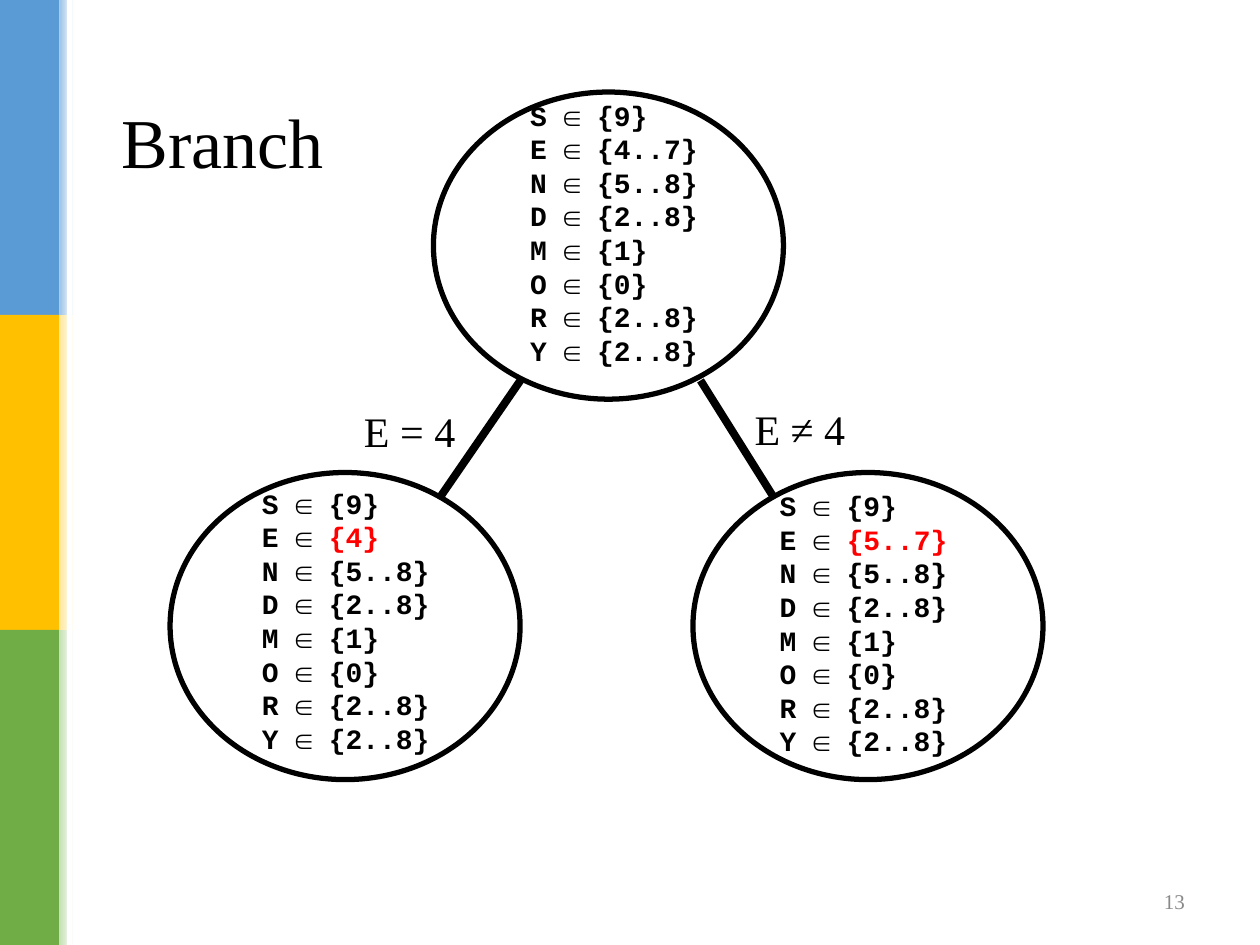
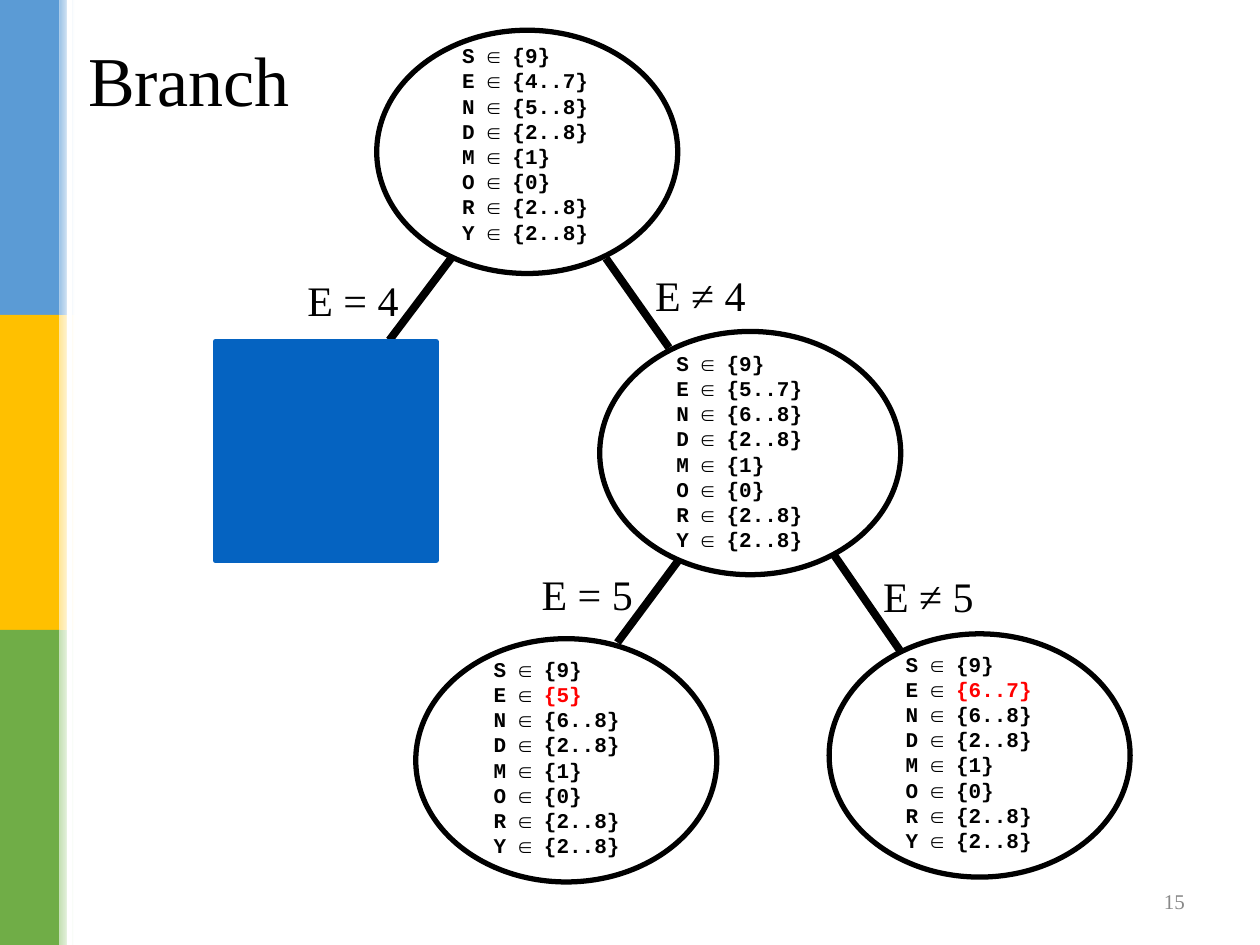
from dataclasses import dataclass

from lxml import etree
from pptx import Presentation
from pptx.dml.color import RGBColor
from pptx.enum.shapes import MSO_CONNECTOR, MSO_SHAPE
from pptx.enum.text import MSO_ANCHOR, MSO_AUTO_SIZE, PP_ALIGN
from pptx.oxml.ns import qn
from pptx.util import Pt

RECT, OVAL = MSO_SHAPE.RECTANGLE, MSO_SHAPE.OVAL
STRAIGHT = MSO_CONNECTOR.STRAIGHT
LEFT, RIGHT = PP_ALIGN.LEFT, PP_ALIGN.RIGHT
TOP, MIDDLE = MSO_ANCHOR.TOP, MSO_ANCHOR.MIDDLE
GROW, FIXED = MSO_AUTO_SIZE.SHAPE_TO_FIT_TEXT, MSO_AUTO_SIZE.NONE


@dataclass(frozen=True)
class Theme:
    ink: str = "000000"
    paper: str = "FFFFFF"
    changed: str = "FF0000"
    closed: str = "0563C1"
    muted: str = "898989"
    bands: tuple = (("5B9BD5", "9DC3E6"), ("FFC000", "FFE699"), ("70AD47", "C5E0B4"))
    serif: str = "Times New Roman"
    mono: str = "Courier New"
    title_size: int = 40
    label_size: int = 24
    number_size: int = 12
    outline: float = 3
    branch: float = 4.5


@dataclass(frozen=True)
class NodeStyle:
    """Oval size, domain list size and type size of the nodes in one tree."""
    oval: tuple
    domains: tuple
    size: int


LARGE = NodeStyle((200, 175.5), (112.3, 161.3), 16)
SMALL = NodeStyle((172, 139), (88.6, 122.4), 12)

# Variable domains at each step of the search
ROOT = {"S": "{9}", "E": "{4..7}", "N": "{5..8}", "D": "{2..8}",
        "M": "{1}", "O": "{0}", "R": "{2..8}", "Y": "{2..8}"}
E_IS_4 = ROOT | {"E": "{4}"}
E_NOT_4 = ROOT | {"E": "{5..7}"}
E_NOT_4_PRUNED = E_NOT_4 | {"N": "{6..8}"}
E_IS_5 = E_NOT_4_PRUNED | {"E": "{5}"}
E_NOT_5 = E_NOT_4_PRUNED | {"E": "{6..7}"}


class Deck:
    def __init__(self, theme):
        self.theme = theme
        self.prs = Presentation()
        self.prs.slide_width, self.prs.slide_height = Pt(720), Pt(540)
        self.slide = None

    def new_slide(self, title_at, number):
        theme = self.theme
        self.slide = self.prs.slides.add_slide(self.prs.slide_layouts[6])
        # Side bands with a fading edge
        for row, (band, edge) in enumerate(theme.bands):
            self.shape(RECT, (0, 180 * row), (34, 180), fill=band)
            self.fade((34, 180 * row), (8.5, 180), edge)
        self.shape(RECT, (38.2, 0), (3, 540), fill=theme.paper)
        # Title and slide number
        self.text(title_at, (130.3, 55.4), [[("Branch", theme.ink)]], theme.title_size)
        self.text((516.2, 500.4), (168, 28.8), [[(number, theme.muted)]],
                  theme.number_size, align=RIGHT, anchor=MIDDLE, wrap=True)

    def shape(self, kind, at, size, fill=None, line=None):
        shape = self.slide.shapes.add_shape(kind, *map(Pt, at + size))
        shape.shadow.inherit = False
        if fill:
            shape.fill.solid()
            shape.fill.fore_color.rgb = RGBColor.from_string(fill)
        else:
            shape.fill.background()
        if line:
            shape.line.color.rgb = RGBColor.from_string(line)
            shape.line.width = Pt(self.theme.outline)
        else:
            shape.line.fill.background()
        return shape

    def fade(self, at, size, color):
        fill = self.shape(RECT, at, size).fill
        fill.gradient()
        fill.gradient_angle = 0
        for stop, shade in zip(fill.gradient_stops, (color, self.theme.paper)):
            stop.color.rgb = RGBColor.from_string(shade)

    def text(self, at, size, lines, type_size, font=None, bold=False,
             align=LEFT, anchor=TOP, wrap=False):
        frame = self.slide.shapes.add_textbox(*map(Pt, at + size)).text_frame
        settings = {"word_wrap": wrap, "vertical_anchor": anchor,
                    "auto_size": FIXED if wrap else GROW}
        for name, value in settings.items():
            setattr(frame, name, value)
        letters = {"name": font or self.theme.serif, "size": Pt(type_size), "bold": bold}
        for index, pieces in enumerate(lines):
            paragraph = frame.add_paragraph() if index else frame.paragraphs[0]
            paragraph.alignment = align
            for words, color in pieces:
                run = paragraph.add_run()
                run.text = words
                for name, value in letters.items():
                    setattr(run.font, name, value)
                run.font.color.rgb = RGBColor.from_string(color)

    def node(self, style, oval_at, domains_at, domains, changed=None):
        theme = self.theme
        self.shape(OVAL, oval_at, style.oval, line=theme.ink)
        lines = []
        for letter, domain in domains.items():
            if letter == changed:
                lines.append([(f"{letter} ∈ ", theme.ink), (domain, theme.changed)])
            else:
                lines.append([(f"{letter} ∈ {domain}", theme.ink)])
        self.text(domains_at, style.domains, lines, style.size, theme.mono, bold=True)

    def branch(self, start, end, choice, choice_at):
        theme = self.theme
        line = self.slide.shapes.add_connector(STRAIGHT, *map(Pt, start + end))
        line.line.color.rgb = RGBColor.from_string(theme.ink)
        line.line.width = Pt(theme.branch)
        etree.SubElement(line._element.spPr, qn("a:effectLst"))
        self.text(choice_at, (66.6, 36), [[(choice, theme.ink)]], theme.label_size)


def first_branch(deck):
    deck.new_slide((62.6, 52.6), "13")
    deck.branch((297.4, 217.4), (251.3, 284.4), "E = 4", (200.9, 228.2))
    deck.branch((400.3, 217.4), (441.4, 283), "E ≠ 4", (424.1, 226.8))
    deck.node(LARGE, (247.7, 52.6), (295.9, 52.6), ROOT)
    deck.node(LARGE, (97.2, 270), (142.6, 274.3), E_IS_4, changed="E")
    deck.node(LARGE, (396, 270), (438.5, 275.8), E_NOT_4, changed="E")


def second_branch(deck):
    deck.new_slide((43.2, 17.3), "15")
    # Upper choice, with the left side closed
    deck.branch((257.8, 147.6), (222.5, 194.4), "E = 4", (168.5, 153.4))
    deck.branch((346.3, 147.6), (382.3, 198.7), "E ≠ 4", (367.2, 150.5))
    deck.node(SMALL, (215.3, 17.3), (257, 20.9), ROOT)
    deck.shape(RECT, (123.1, 195.1), (126, 125.3),
               fill=deck.theme.closed, line=deck.theme.closed)
    deck.node(SMALL, (342.7, 189.4), (379.4, 196.6), E_NOT_4_PRUNED)
    # Lower choice
    deck.branch((388.1, 319.7), (352.8, 367.2), "E = 5", (302.4, 321.1))
    deck.branch((475.9, 316.1), (514.1, 371.5), "E ≠ 5", (497.5, 322.6))
    deck.node(SMALL, (237.6, 365), (275, 371.5), E_IS_5, changed="E")
    deck.node(SMALL, (473.8, 362.2), (510.5, 368.6), E_NOT_5, changed="E")


def main():
    deck = Deck(Theme())
    first_branch(deck)
    second_branch(deck)
    deck.prs.save("out.pptx")


if __name__ == "__main__":
    main()
